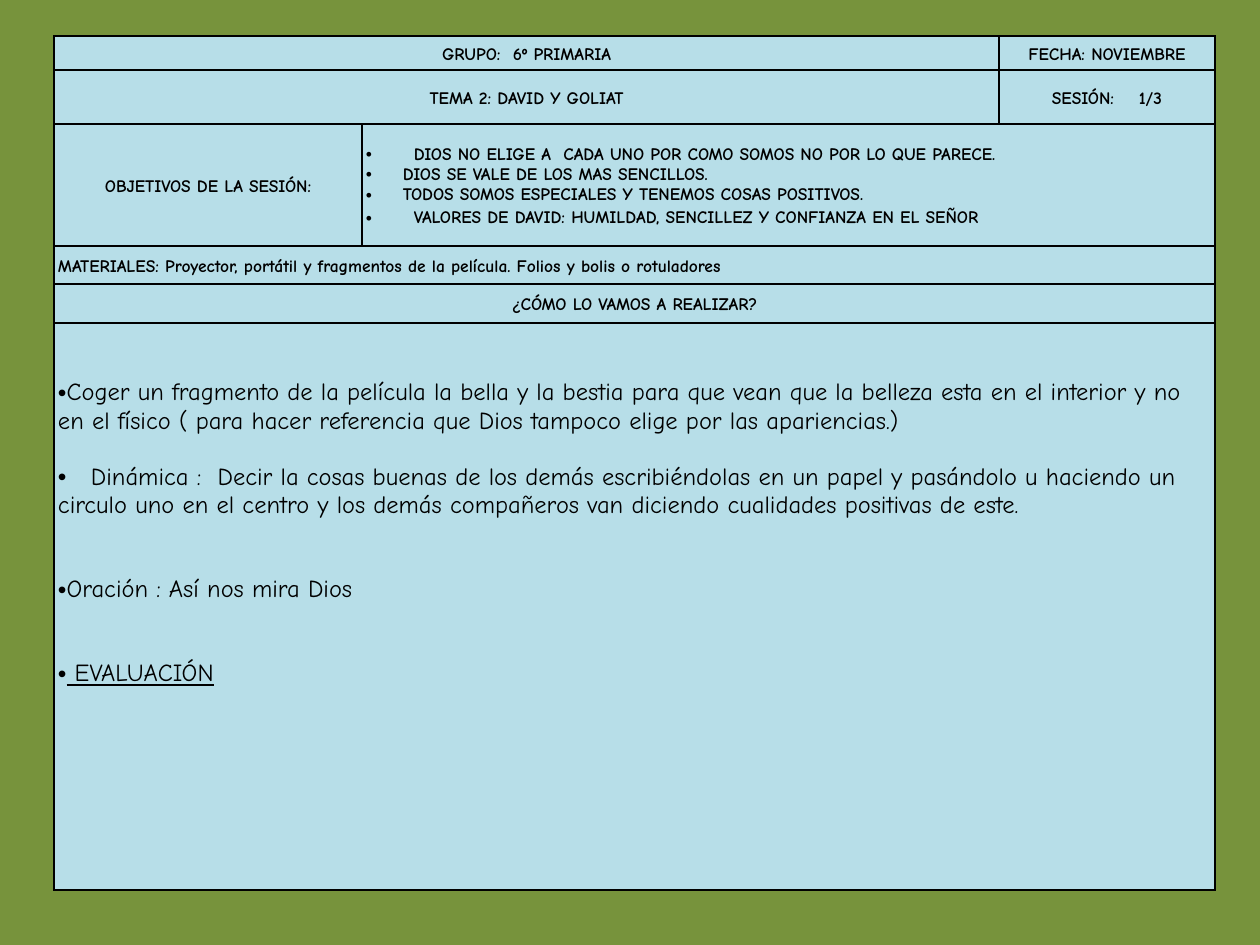
from pptx import Presentation
from pptx.dml.color import RGBColor
from pptx.enum.text import MSO_ANCHOR, PP_ALIGN
from pptx.oxml import parse_xml
from pptx.oxml.ns import nsdecls
from pptx.util import Pt

PX = 914400 // 126
COLUMNS = [308, 637, 216]
ROWS = [34, 54, 122, 38, 39, 567]


def color(value):
    """Turn a hex string into a colour."""
    return RGBColor.from_string(value)


class LessonSheet:
    """Hold the style and the current slide of a lesson plan."""

    font, ink, paper, ground = "Comic Neue", "000000", "B7DEE8", "77933C"

    def __init__(self, deck):
        """Add a blank page with the background colour."""
        self.page = deck.slides.add_slide(deck.slide_layouts[6])
        fill = self.page.background.fill
        fill.solid()
        fill.fore_color.rgb = color(self.ground)

    def grid(self, left, top, columns, rows):
        """Add the table with its column widths and row heights."""
        frame = self.page.shapes.add_table(
            len(rows), len(columns), left * PX, top * PX, sum(columns) * PX, sum(rows) * PX)
        self.table = frame.table
        self.table.first_row = self.table.horz_banding = False
        for column, width in zip(self.table.columns, columns):
            column.width = width * PX
        for row, height in zip(self.table.rows, rows):
            row.height = height * PX
        for cell in self.table.iter_cells():
            self.style_cell(cell)

    def style_cell(self, cell):
        """Give a cell its borders, fill and margins."""
        properties = cell._tc.get_or_add_tcPr()
        for side in "LRTB":
            properties.append(parse_xml(
                f'<a:ln{side} {nsdecls("a")} w="12700"><a:solidFill>'
                f'<a:srgbClr val="{self.ink}"/></a:solidFill></a:ln{side}>'))
        cell.fill.solid()
        cell.fill.fore_color.rgb = color(self.paper)
        cell.margin_left = cell.margin_right = 4 * PX
        cell.margin_top = cell.margin_bottom = 0
        cell.vertical_anchor = MSO_ANCHOR.MIDDLE

    def cell(self, row, first, last):
        """Return a cell, merged from the first to the last column."""
        cell = self.table.cell(row, first)
        if last > first:
            cell.merge(self.table.cell(row, last))
        return cell

    def put_text(self, para, text, size=10, bold=True, align=PP_ALIGN.LEFT, spacing=1.15):
        """Fill and format one paragraph."""
        para.text = text
        para.alignment = align
        para.line_spacing = spacing
        font = para.font
        font.name, font.size, font.bold = self.font, Pt(size), bold
        font.color.rgb = color(self.ink)

    def bullet(self, para, hang=0, tab=None):
        """Add a bullet with a hanging indent and an optional tab stop."""
        properties = para._p.get_or_add_pPr()
        properties.set("marL", str(hang * PX))
        properties.set("indent", str(-hang * PX))
        parts = ['<a:buFont {} typeface="Arial"/>', '<a:buChar {} char="•"/>']
        if tab:
            parts.append(f'<a:tabLst {{}}><a:tab pos="{tab * PX}" algn="l"/></a:tabLst>')
        for part in parts:
            properties.insert_element_before(
                parse_xml(part.format(nsdecls("a"))), "a:defRPr", "a:extLst")

    def heading(self, row, first, last, text, align=PP_ALIGN.CENTER):
        """Fill a one-line cell."""
        self.put_text(self.cell(row, first, last).text_frame.paragraphs[0], text, align=align)

    def paragraphs(self, cell, count):
        """Return the given number of paragraphs of a cell."""
        frame = cell.text_frame
        return [frame.paragraphs[0]] + [frame.add_paragraph() for _ in range(count - 1)]

    def goals(self, row, first, last, items):
        """List the bulleted goals, each with its hang and line spacing."""
        paras = self.paragraphs(self.cell(row, first, last), len(items))
        for para, (text, hang, spacing) in zip(paras, items):
            self.put_text(para, text, spacing=spacing)
            self.bullet(para, hang)

    def activities(self, row, first, last, items):
        """List the activities, each with the gap above it in points."""
        cell = self.cell(row, first, last)
        cell.vertical_anchor = MSO_ANCHOR.TOP
        cell.margin_top = 56 * PX
        for para, (text, gap) in zip(self.paragraphs(cell, len(items)), items):
            self.put_text(para, text, size=14, bold=False, spacing=1.0)
            para.space_before = Pt(gap)
            self.bullet(para, tab=33)
        para.font.underline = True


def main():
    """Build the lesson plan."""
    deck = Presentation()
    deck.slide_width, deck.slide_height = 1260 * PX, 945 * PX
    sheet = LessonSheet(deck)
    sheet.grid(54, 36, COLUMNS, ROWS)
    sheet.heading(0, 0, 1, "GRUPO:  6º PRIMARIA")
    sheet.heading(0, 2, 2, "FECHA: NOVIEMBRE")
    sheet.heading(1, 0, 1, "TEMA 2: DAVID Y GOLIAT")
    sheet.heading(1, 2, 2, "SESIÓN:    1/3")
    sheet.heading(2, 0, 0, "OBJETIVOS DE LA SESIÓN:")
    sheet.goals(2, 1, 2, [
        ("DIOS NO ELIGE A  CADA UNO POR COMO SOMOS NO POR LO QUE PARECE.", 48, 1.15),
        ("DIOS SE VALE DE LOS MAS SENCILLOS.", 37, 1.0),
        ("TODOS SOMOS ESPECIALES Y TENEMOS COSAS POSITIVOS.", 37, 1.0),
        ("VALORES DE DAVID: HUMILDAD, SENCILLEZ Y CONFIANZA EN EL SEÑOR", 48, 1.15),
    ])
    sheet.heading(3, 0, 2, "MATERIALES: Proyector, portátil y fragmentos de la película. "
                  "Folios y bolis o rotuladores", PP_ALIGN.LEFT)
    sheet.heading(4, 0, 2, "¿CÓMO LO VAMOS A REALIZAR?")
    sheet.activities(5, 0, 2, [
        ("Coger un fragmento de la película la bella y la bestia para que vean que la belleza "
         "esta en el interior y no en el físico ( para hacer referencia que Dios tampoco elige "
         "por las apariencias.)", 0),
        ("\tDinámica :  Decir la cosas buenas de los demás escribiéndolas en un papel y "
         "pasándolo u haciendo un circulo uno en el centro y los demás compañeros van diciendo "
         "cualidades positivas de este.", 16),
        ("Oración : Así nos mira Dios", 32),
        (" EVALUACIÓN", 32),
    ])
    deck.save("out.pptx")


if __name__ == "__main__":
    main()
